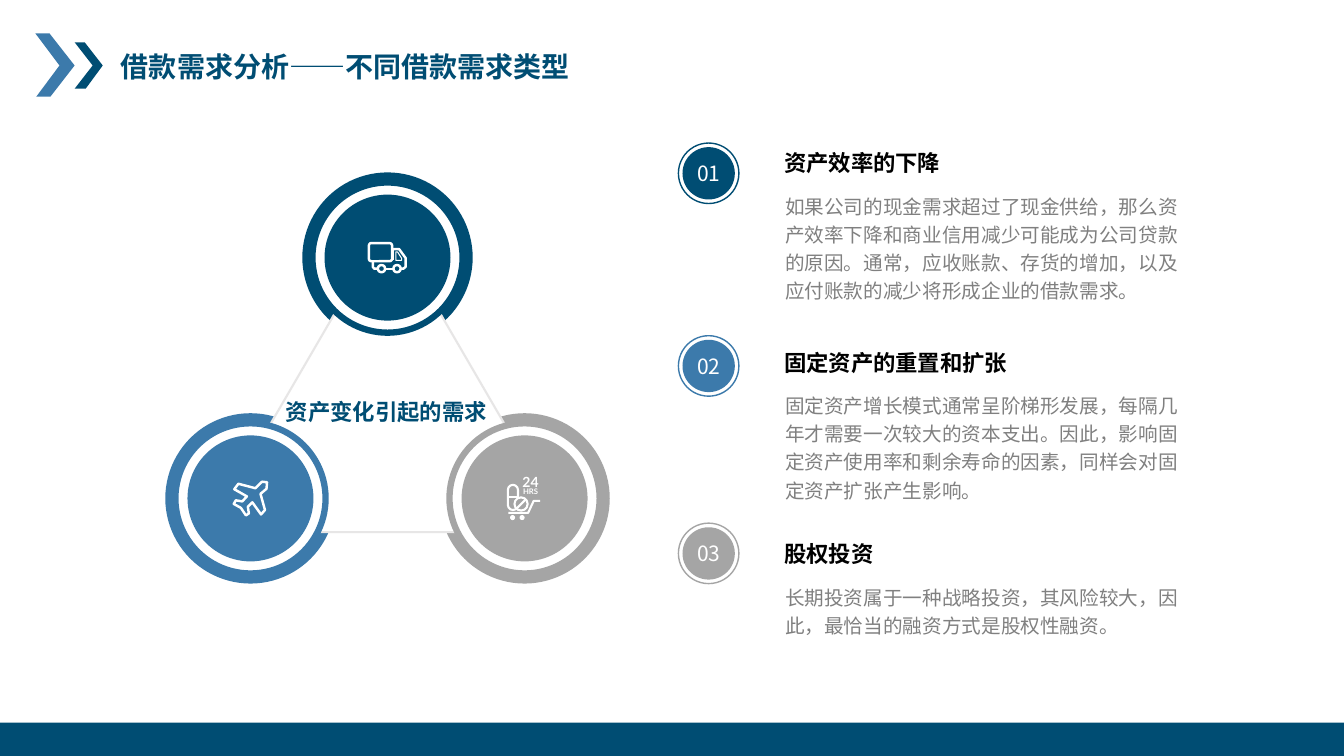
from pptx import Presentation
from pptx.dml.color import RGBColor
from pptx.enum.shapes import MSO_CONNECTOR as Link, MSO_SHAPE as Preset
from pptx.enum.text import MSO_ANCHOR as Anchor, MSO_AUTO_SIZE as Fit, PP_ALIGN as Align
from pptx.oxml.ns import qn
from pptx.util import Pt
from lxml.etree import SubElement

COLORS = {"navy": "004D73", "blue": "3C7AAB", "gray": "A5A5A5", "white": "FFFFFF",
          "edge": "E7E6E6", "body": "808080", "black": "000000"}
CJK, LATIN = "Noto Sans CJK SC", "Lato"


class Board:
    """Draws styled elements on one slide, with lengths in points."""

    def __init__(self, slide):
        self.slide = slide
        self.shapes = slide.shapes

    def paint(self, shape, fill=None, line=None, weight=1.0):
        shape.shadow.inherit = False
        if fill:
            shape.fill.solid()
            shape.fill.fore_color.rgb = RGBColor.from_string(COLORS[fill])
        else:
            shape.fill.background()
        if line:
            shape.line.color.rgb = RGBColor.from_string(COLORS[line])
            shape.line.width = Pt(weight)
        else:
            shape.line.fill.background()
        return shape

    def preset(self, kind, left, top, width, height, **style):
        shape = self.shapes.add_shape(kind, Pt(left), Pt(top), Pt(width), Pt(height))
        return self.paint(shape, **style)

    def circle(self, x, y, size, **style):
        return self.preset(Preset.OVAL, x - size / 2, y - size / 2, size, size, **style)

    def outline(self, points, x=0, y=0, close=True, **style):
        corners = [(Pt(x + dx), Pt(y + dy)) for dx, dy in points]
        builder = self.shapes.build_freeform(*corners[0])
        builder.add_line_segments(corners[1:], close=close)
        return self.paint(builder.convert_to_shape(), **style)

    def stroke(self, x1, y1, x2, y2, color="white", weight=1.5):
        link = self.shapes.add_connector(Link.STRAIGHT, Pt(x1), Pt(y1), Pt(x2), Pt(y2))
        link.line.color.rgb = RGBColor.from_string(COLORS[color])
        link.line.width = Pt(weight)
        SubElement(link._element.spPr, qn("a:effectLst"))

    def label(self, shape, text, size, color, bold=False, align=Align.LEFT, anchor=Anchor.TOP,
              font=CJK, wrap=True, inset=(7.2, 3.6), spacing=None):
        frame = shape.text_frame
        frame.text = text
        frame.word_wrap = wrap
        frame.auto_size = Fit.NONE
        frame.vertical_anchor = anchor
        frame.margin_left = frame.margin_right = Pt(inset[0])
        frame.margin_top = frame.margin_bottom = Pt(inset[1])
        paragraph = frame.paragraphs[0]
        paragraph.alignment = align
        if spacing:
            paragraph.line_spacing = spacing
        for run in paragraph.runs:
            run.font.name = font
            run.font.size = Pt(size)
            run.font.bold = bold
            run.font.color.rgb = RGBColor.from_string(COLORS[color])
            SubElement(run._r.get_or_add_rPr(), qn("a:ea")).set("typeface", CJK)

    def text(self, left, top, width, height, text, size, color, **style):
        box = self.shapes.add_textbox(Pt(left), Pt(top), Pt(width), Pt(height))
        self.label(box, text, size, color, **style)

    def title(self, left, top, width, height, text):
        title = self.shapes.title
        title.left, title.top, title.width, title.height = map(Pt, (left, top, width, height))
        self.label(title, text, 20, "navy", bold=True, spacing=1.0)

    def truck(self, x, y):
        cargo = self.preset(Preset.ROUNDED_RECTANGLE, x - 13.3, y - 10.4, 16.6, 13,
                            line="white", weight=1.75)
        cargo.adjustments[0] = 0.14
        cab = [(4, -6.1), (8.3, -6.1), (13, 0.4), (13, 6.5), (11.5, 7.9), (9.5, 7.9)]
        chassis = [(-10.4, 2.6), (-10.4, 6.8), (-9.4, 7.9), (-7, 7.9)]
        for route in (cab, chassis):
            self.outline(route, x, y, close=False, line="white", weight=1.75)
        window = [(5.9, -4), (7.2, -4), (10, 0.4), (10, 2), (5.9, 2)]
        self.outline(window, x, y, line="white", weight=0.75)
        self.stroke(x + 4, y - 6.1, x + 4, y + 2)
        self.stroke(x - 1.6, y + 7.9, x + 4.1, y + 7.9)
        for wheel in (-4.3, 6.8):
            self.circle(x + wheel, y + 7.9, 5.2, line="white", weight=1.75)

    def plane(self, x, y):
        hull = [(11.5, -6.8), (7.2, -3.2), (10.4, 8.3), (7.6, 11.5), (1.4, 2.9), (-1.8, 6.1),
                (-1.1, 10.8), (-3.2, 12.2), (-6.8, 6.8), (-11.9, 4), (-10.4, 1.4), (-5.8, 2.2),
                (-2.5, -1.4), (-11.5, -6.5), (-8.6, -10.4), (3.6, -7.2), (8.3, -11.9),
                (11.9, -11.5)]
        self.outline(hull, x, y, line="white", weight=1.75)

    def cart(self, x, y):
        pill = self.preset(Preset.ROUNDED_RECTANGLE, x - 11.9, y - 9.7, 7.2, 18,
                           line="white", weight=1.5)
        pill.adjustments[0] = 0.5
        self.stroke(x - 11.9, y - 1.1, x - 4.7, y - 1.1)
        self.circle(x - 2.5, y + 4, 9.4, fill="gray", line="white", weight=1.5)
        self.stroke(x - 5.8, y + 7.3, x + 0.8, y + 0.7)
        basket = [(-11.5, 10.4), (2.5, 10.4), (6.5, 1.8), (11.2, 1.8)]
        self.outline(basket, x, y, close=False, line="white", weight=1.5)
        for wheel in (-8.6, -1.8):
            self.circle(x + wheel, y + 13.7, 3.6, fill="white")
        for caption, size, middle in (("24", 10, -11.5), ("HRS", 5.5, -4.7)):
            self.text(x - 5.7, y + middle - 6, 20, 12, caption, size, "white", bold=True,
                      align=Align.CENTER, anchor=Anchor.MIDDLE, font=LATIN, wrap=False,
                      inset=(0, 0))

    def topic(self, number, color, badge_y, heading_y, heading, body):
        self.circle(506.2, badge_y, 43.2, line=color)
        badge = self.circle(506.2, badge_y, 37.4, fill=color)
        self.label(badge, number, 15, "white", align=Align.CENTER, anchor=Anchor.MIDDLE,
                   wrap=False, inset=(0, 0))
        self.text(553, heading_y, 172.8, 27.4, heading, 16, "black", bold=True, wrap=False)
        self.text(553.7, heading_y + 29, 301, 86, body, 14, "body", spacing=1.2)


TOPICS = [
    ("01", "navy", 123.8, 103, "资产效率的下降",
     "如果公司的现金需求超过了现金供给，那么资产效率下降和商业信用减少可能成为公司贷款的原因。"
     "通常，应收账款、存货的增加，以及应付账款的减少将形成企业的借款需求。"),
    ("02", "blue", 261.4, 245.5, "固定资产的重置和扩张",
     "固定资产增长模式通常呈阶梯形发展，每隔几年才需要一次较大的资本支出。"
     "因此，影响固定资产使用率和剩余寿命的因素，同样会对固定资产扩张产生影响。"),
    ("03", "gray", 395.3, 382.5, "股权投资",
     "长期投资属于一种战略投资，其风险较大，因此，最恰当的融资方式是股权性融资。"),
]
CHEVRONS = [
    ("blue", [(25.2, 23.8), (35.3, 23.8), (53.3, 46.8), (36, 69.1), (25.9, 69.1), (42.5, 46.8)]),
    ("navy", [(53.3, 30.2), (60.5, 30.2), (73.4, 46.8), (61.2, 63.4), (53.3, 63.4),
              (66.2, 46.8)]),
]


def main():
    deck = Presentation()
    deck.slide_width, deck.slide_height = Pt(960), Pt(540)
    board = Board(deck.slides.add_slide(deck.slide_layouts[5]))

    for color, points in CHEVRONS:
        board.outline(points, fill=color)
    board.preset(Preset.RECTANGLE, 0, 516.2, 960, 23.8, fill="navy")
    board.title(79.2, 31.7, 355.7, 31.7, "借款需求分析——不同借款需求类型")

    hubs = [("navy", 276.8, 184, board.truck), ("blue", 178.9, 356, board.plane),
            ("gray", 374.7, 356, board.cart)]
    for color, x, y, _ in hubs:
        board.circle(x, y, 121.7, fill=color)
    board.preset(Preset.ISOSCELES_TRIANGLE, 148.3, 159.1, 257, 221, fill="white",
                 line="edge", weight=1.5)
    for color, x, y, icon in hubs:
        board.circle(x, y, 107.3, fill="white", line=color, weight=4.5)
        board.circle(x, y, 90, fill=color)
        icon(x, y)
    board.text(194.4, 276.5, 163.4, 32.4, "资产变化引起的需求", 16, "navy", bold=True,
               align=Align.CENTER, font=LATIN, inset=(0, 7.9))

    for topic in TOPICS:
        board.topic(*topic)
    deck.save("out.pptx")


if __name__ == "__main__":
    main()
